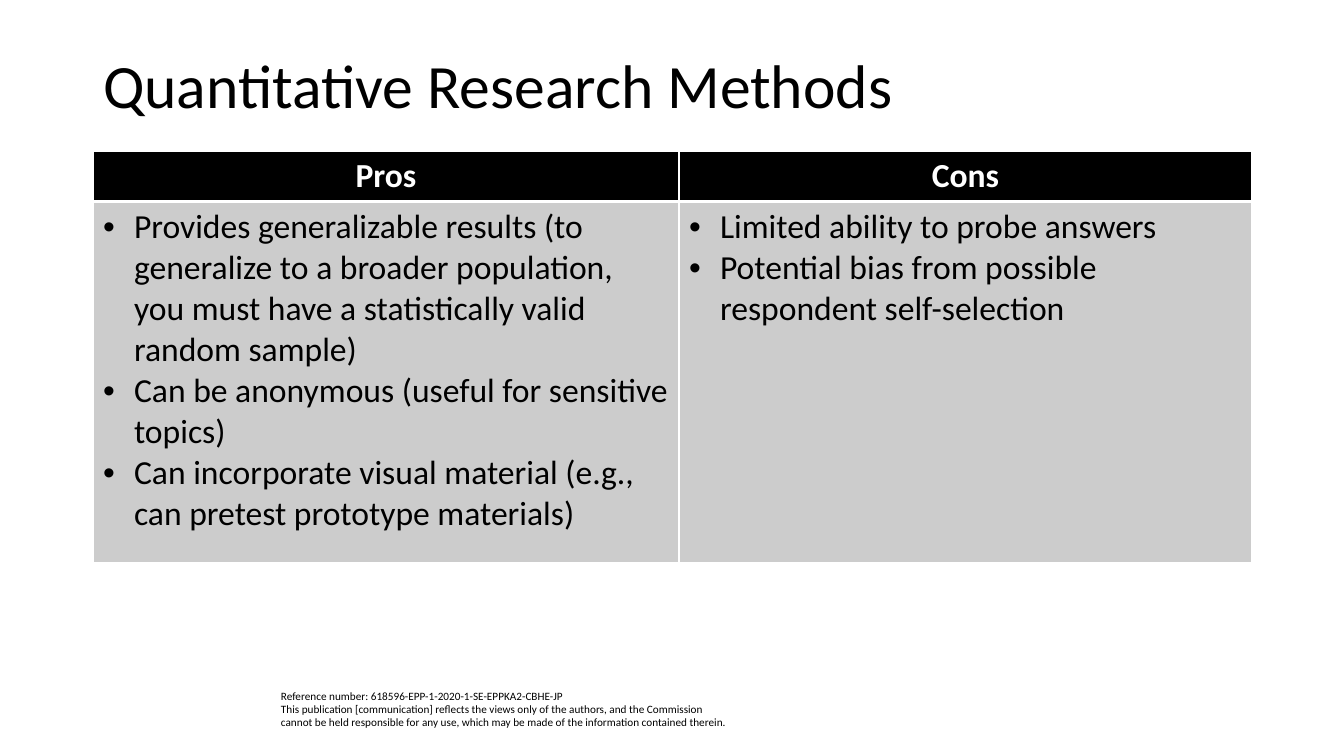
from lxml.etree import SubElement
from pptx import Presentation
from pptx.dml.color import RGBColor
from pptx.enum.text import MSO_ANCHOR, MSO_AUTO_SIZE, PP_ALIGN
from pptx.oxml.ns import qn
from pptx.util import Emu, Pt

TITLE = "Quantitative Research Methods"
COLUMNS = {
    "Pros": [
        "Provides generalizable results (to generalize to a broader population, "
        "you must have a statistically valid random sample)",
        "Can be anonymous (useful for sensitive topics)",
        "Can incorporate visual material (e.g., can pretest prototype materials)",
    ],
    "Cons": [
        "Limited ability to probe answers",
        "Potential bias from possible respondent self-selection",
    ],
}
REFERENCE = (
    "Reference number: 618596-EPP-1-2020-1-SE-EPPKA2-CBHE-JP\v"
    "This publication [communication] reflects the views only of the authors, "
    "and the Commission cannot be held responsible for any use, which may be "
    "made of the information contained therein."
)

COLORS = {"black": "000000", "white": "FFFFFF", "body": "CCCCCC"}
FONT = "Calibri"
SLIDE_SIZE = (1344, 756)
TITLE_BOX = (93, 40, 1159, 97)
REFERENCE_BOX = (271, 684, 468, 50)
TABLE_ORIGIN = (93, 151)
COLUMN_WIDTHS = (586, 573)
ROW_HEIGHTS = (49, 361)
BULLET_INDENT = 31
EMU_PER_PX = 914400 / 100.8


def px(length):
    return Emu(round(length * EMU_PER_PX))


def box(lengths):
    return [px(length) for length in lengths]


def set_font(paragraph, size, color="black", bold=False):
    font = paragraph.font
    font.name = FONT
    font.size = Pt(size)
    font.bold = bold
    font.color.rgb = RGBColor.from_string(COLORS[color])


def add_bullet(paragraph):
    properties = paragraph._p.get_or_add_pPr()
    properties.set("marL", str(px(BULLET_INDENT)))
    properties.set("indent", str(-px(BULLET_INDENT)))
    SubElement(properties, qn("a:buFont"), typeface="Arial")
    SubElement(properties, qn("a:buChar"), char="•")


def set_borders(cell, top, bottom):
    properties = cell._tc.get_or_add_tcPr()
    for side, width in (("L", 1), ("R", 1), ("T", top), ("B", bottom)):
        line = SubElement(properties, qn(f"a:ln{side}"), w=str(Pt(width)))
        fill = SubElement(line, qn("a:solidFill"))
        SubElement(fill, qn("a:srgbClr"), val=COLORS["white"])


def fill_cell(cell, color):
    cell.fill.solid()
    cell.fill.fore_color.rgb = RGBColor.from_string(COLORS[color])


def add_reference(slide):
    frame = slide.shapes.add_textbox(*box(REFERENCE_BOX)).text_frame
    frame.word_wrap = True
    frame.text = REFERENCE
    set_font(frame.paragraphs[0], 8)


def fill_title(slide):
    title = slide.shapes.title
    title.left, title.top, title.width, title.height = box(TITLE_BOX)
    frame = title.text_frame
    frame.text = TITLE
    frame.auto_size = MSO_AUTO_SIZE.NONE
    frame.vertical_anchor = MSO_ANCHOR.MIDDLE
    paragraph = frame.paragraphs[0]
    paragraph.alignment = PP_ALIGN.LEFT
    paragraph.line_spacing = 0.9
    set_font(paragraph, 44)


def add_comparison(slide):
    size = (sum(COLUMN_WIDTHS), sum(ROW_HEIGHTS))
    table = slide.shapes.add_table(
        len(ROW_HEIGHTS), len(COLUMNS), *box(TABLE_ORIGIN + size)
    ).table
    for row, height in zip(table.rows, ROW_HEIGHTS):
        row.height = px(height)
    for index, (heading, points) in enumerate(COLUMNS.items()):
        table.columns[index].width = px(COLUMN_WIDTHS[index])

        header = table.cell(0, index)
        set_borders(header, top=1, bottom=3)
        fill_cell(header, "black")
        header.text = heading
        paragraph = header.text_frame.paragraphs[0]
        paragraph.alignment = PP_ALIGN.CENTER
        set_font(paragraph, 24, "white", bold=True)

        body = table.cell(1, index)
        set_borders(body, top=3, bottom=1)
        fill_cell(body, "body")
        body.text = "\n".join(points)
        for paragraph in body.text_frame.paragraphs:
            add_bullet(paragraph)
            set_font(paragraph, 24)


def main():
    presentation = Presentation()
    presentation.slide_width, presentation.slide_height = box(SLIDE_SIZE)
    slide = presentation.slides.add_slide(presentation.slide_layouts[5])
    add_reference(slide)
    fill_title(slide)
    add_comparison(slide)
    presentation.save("out.pptx")


if __name__ == "__main__":
    main()
